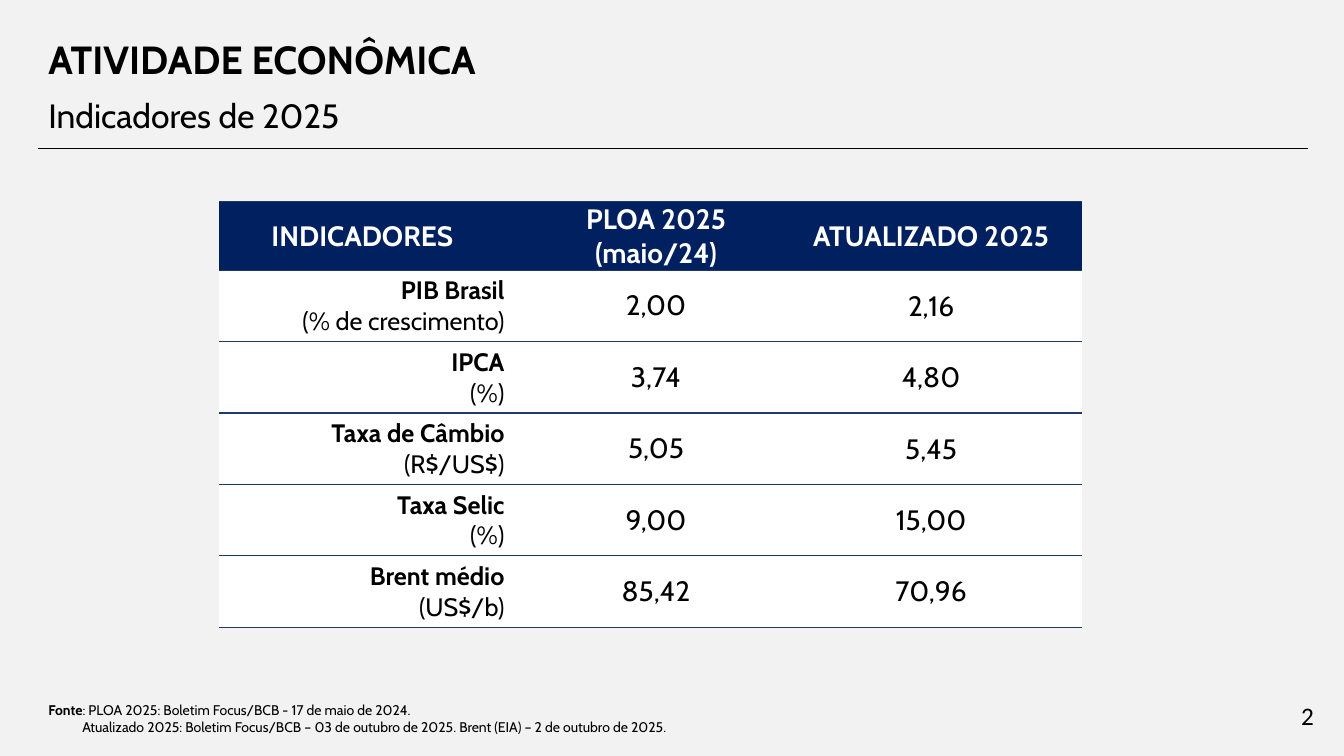
from dataclasses import dataclass

from lxml.etree import SubElement
from pptx import Presentation
from pptx.dml.color import RGBColor
from pptx.enum.shapes import MSO_CONNECTOR as Connector
from pptx.enum.text import MSO_ANCHOR as Anchor, PP_ALIGN as Align
from pptx.oxml.ns import qn
from pptx.slide import Slide
from pptx.table import _Cell as Cell
from pptx.util import Pt


@dataclass(frozen=True)
class Theme:
    """Colours, fonts and type sizes of the slide."""
    background: str = "F2F2F2"
    ink: str = "000000"
    paper: str = "FFFFFF"
    navy: str = "002060"
    rule: str = "203864"
    font: str = "Cabin"
    number_font: str = "Calibri"
    title: int = 28
    subtitle: int = 24
    value: int = 20
    label: int = 18
    source: int = 10


THEME = Theme()


@dataclass(frozen=True)
class Part:
    """A stretch of text with its weight."""
    text: str
    bold: bool = False


@dataclass(frozen=True)
class TextBox:
    """A text box in points; each line is a tuple of parts."""
    left: float
    top: float
    width: float
    height: float
    lines: tuple[tuple[Part, ...], ...]
    size: int
    anchor: Anchor = Anchor.MIDDLE
    font: str = THEME.font
    spacing: float = 1.0
    wrap: bool = True
    last_indent: float = 0


@dataclass(frozen=True)
class Indicator:
    """One row of the indicator table."""
    name: str
    unit: str
    budget: str
    updated: str


@dataclass(frozen=True)
class CellStyle:
    """Look of a table cell, with insets in points."""
    size: int = THEME.value
    color: str = THEME.ink
    fill: str = THEME.paper
    align: Align = Align.CENTER
    side_inset: float = 0.7
    top_inset: float = 0.7
    bottom_inset: float = 0


HEADER = CellStyle(color=THEME.paper, fill=THEME.navy)
LABEL = CellStyle(size=THEME.label, align=Align.RIGHT)
BUDGET = CellStyle(side_inset=10.8, top_inset=5.76, bottom_inset=5.76)
UPDATED = CellStyle()

TABLE_LEFT, TABLE_TOP = 156.5, 144
COLUMN_WIDTHS = (204.5, 12.2, 190.8, 202.3, 6.5)
HEADER_HEIGHT, ROW_HEIGHT = 49, 51
LABEL_COLUMN, BUDGET_COLUMN, UPDATED_COLUMN = 0, 2, 3

INDICATORS = (
    Indicator("PIB Brasil", "(% de crescimento)", "2,00", "2,16"),
    Indicator("IPCA", "(%)", "3,74", "4,80"),
    Indicator("Taxa de Câmbio", "(R$/US$)", "5,05", "5,45"),
    Indicator("Taxa Selic", "(%)", "9,00", "15,00"),
    Indicator("Brent médio", "(US$/b)", "85,42", "70,96"),
)

TEXT_BOXES = (
    TextBox(27.4, 15.8, 565, 57, ((Part("ATIVIDADE ECONÔMICA", True),),),
            THEME.title, spacing=0.9),
    TextBox(27.4, 58.3, 862.6, 42.5, ((Part("Indicadores de 2025"),),),
            THEME.subtitle, spacing=1.2),
    TextBox(27.4, 496.8, 775.4, 31.8, (
        (Part("Fonte", True), Part(": PLOA 2025: Boletim Focus/BCB - 17 de maio de 2024.")),
        (Part("Atualizado 2025: Boletim Focus/BCB – 03 de outubro de 2025. "
              "Brent (EIA) – 2 de outubro de 2025."),),
    ), THEME.source, Anchor.BOTTOM, last_indent=24.3),
    TextBox(922.3, 496.8, 23.8, 28.8, ((Part("2"),),),
            THEME.label, Anchor.TOP, THEME.number_font, wrap=False),
)


def format_run(run, size: int, color: str, bold: bool, font: str = THEME.font) -> None:
    """Apply the type settings to a run."""
    run.font.name = font
    run.font.size = Pt(size)
    run.font.bold = bold
    run.font.color.rgb = RGBColor.from_string(color)


def draw_text_box(slide: Slide, box: TextBox) -> None:
    """Draw a text box with its lines."""
    shape = slide.shapes.add_textbox(Pt(box.left), Pt(box.top), Pt(box.width), Pt(box.height))
    text_frame = shape.text_frame
    text_frame.word_wrap = box.wrap
    text_frame.vertical_anchor = box.anchor
    text_frame.text = "\n".join(line[0].text for line in box.lines)
    for paragraph, line in zip(text_frame.paragraphs, box.lines):
        paragraph.line_spacing = box.spacing
        for part in line[1:]:
            paragraph.add_run().text = part.text
        for run, part in zip(paragraph.runs, line):
            format_run(run, box.size, THEME.ink, part.bold, box.font)
    if box.last_indent:
        properties = text_frame.paragraphs[-1]._p.get_or_add_pPr()
        properties.set("marL", str(Pt(box.last_indent)))
        properties.set("indent", "0")


def add_borders(cell: Cell) -> None:
    """Rule the cell above and below and leave its sides open."""
    properties = cell._tc.get_or_add_tcPr()
    for side in ("lnL", "lnR"):
        SubElement(SubElement(properties, qn(f"a:{side}")), qn("a:noFill"))
    for side in ("lnT", "lnB"):
        line = SubElement(properties, qn(f"a:{side}"), w=str(Pt(1)))
        fill = SubElement(line, qn("a:solidFill"))
        SubElement(fill, qn("a:srgbClr"), val=THEME.rule)


def fill_cell(cell: Cell, style: CellStyle, parts: tuple[Part, ...]) -> None:
    """Style a cell and write each part as a paragraph."""
    add_borders(cell)
    cell.fill.solid()
    cell.fill.fore_color.rgb = RGBColor.from_string(style.fill)
    cell.vertical_anchor = Anchor.MIDDLE
    cell.margin_left = cell.margin_right = Pt(style.side_inset)
    cell.margin_top = Pt(style.top_inset)
    cell.margin_bottom = Pt(style.bottom_inset)
    cell.text_frame.text = "\n".join(part.text for part in parts)
    for paragraph, part in zip(cell.text_frame.paragraphs, parts):
        paragraph.alignment = style.align
        for run in paragraph.runs:
            format_run(run, style.size, style.color, part.bold)


def draw_table(slide: Slide) -> None:
    """Draw the indicator table."""
    heights = (HEADER_HEIGHT,) + (ROW_HEIGHT,) * len(INDICATORS)
    table = slide.shapes.add_table(
        len(heights), len(COLUMN_WIDTHS), Pt(TABLE_LEFT), Pt(TABLE_TOP),
        Pt(sum(COLUMN_WIDTHS)), Pt(sum(heights))).table
    table.first_row = table.horz_banding = False
    for column, width in zip(table.columns, COLUMN_WIDTHS):
        column.width = Pt(width)
    header = {
        LABEL_COLUMN: (HEADER, (Part("INDICADORES", True),)),
        BUDGET_COLUMN: (HEADER, (Part("PLOA 2025", True), Part("(maio/24)", True))),
        UPDATED_COLUMN: (HEADER, (Part("ATUALIZADO 2025", True),)),
    }
    body = [{
        LABEL_COLUMN: (LABEL, (Part(item.name, True), Part(item.unit))),
        BUDGET_COLUMN: (BUDGET, (Part(item.budget),)),
        UPDATED_COLUMN: (UPDATED, (Part(item.updated),)),
    } for item in INDICATORS]
    for row, height, contents in zip(table.rows, heights, [header, *body]):
        row.height = Pt(height)
        spacer = (HEADER if contents is header else UPDATED, ())
        for index, cell in enumerate(row.cells):
            fill_cell(cell, *contents.get(index, spacer))


def draw_rule(slide: Slide) -> None:
    """Draw the thin rule below the headings."""
    rule = slide.shapes.add_connector(Connector.STRAIGHT, Pt(27.4), Pt(106), Pt(934.5), Pt(106))
    rule.line.width = Pt(0.5)
    rule.line.color.rgb = RGBColor.from_string(THEME.ink)
    SubElement(rule._element.spPr, qn("a:effectLst"))


def main() -> None:
    """Build and save the slide."""
    presentation = Presentation()
    presentation.slide_width, presentation.slide_height = Pt(960), Pt(540)
    slide = presentation.slides.add_slide(presentation.slide_layouts[6])
    slide.background.fill.solid()
    slide.background.fill.fore_color.rgb = RGBColor.from_string(THEME.background)
    for box in TEXT_BOXES:
        draw_text_box(slide, box)
    draw_rule(slide)
    draw_table(slide)
    presentation.save("out.pptx")


if __name__ == "__main__":
    main()
